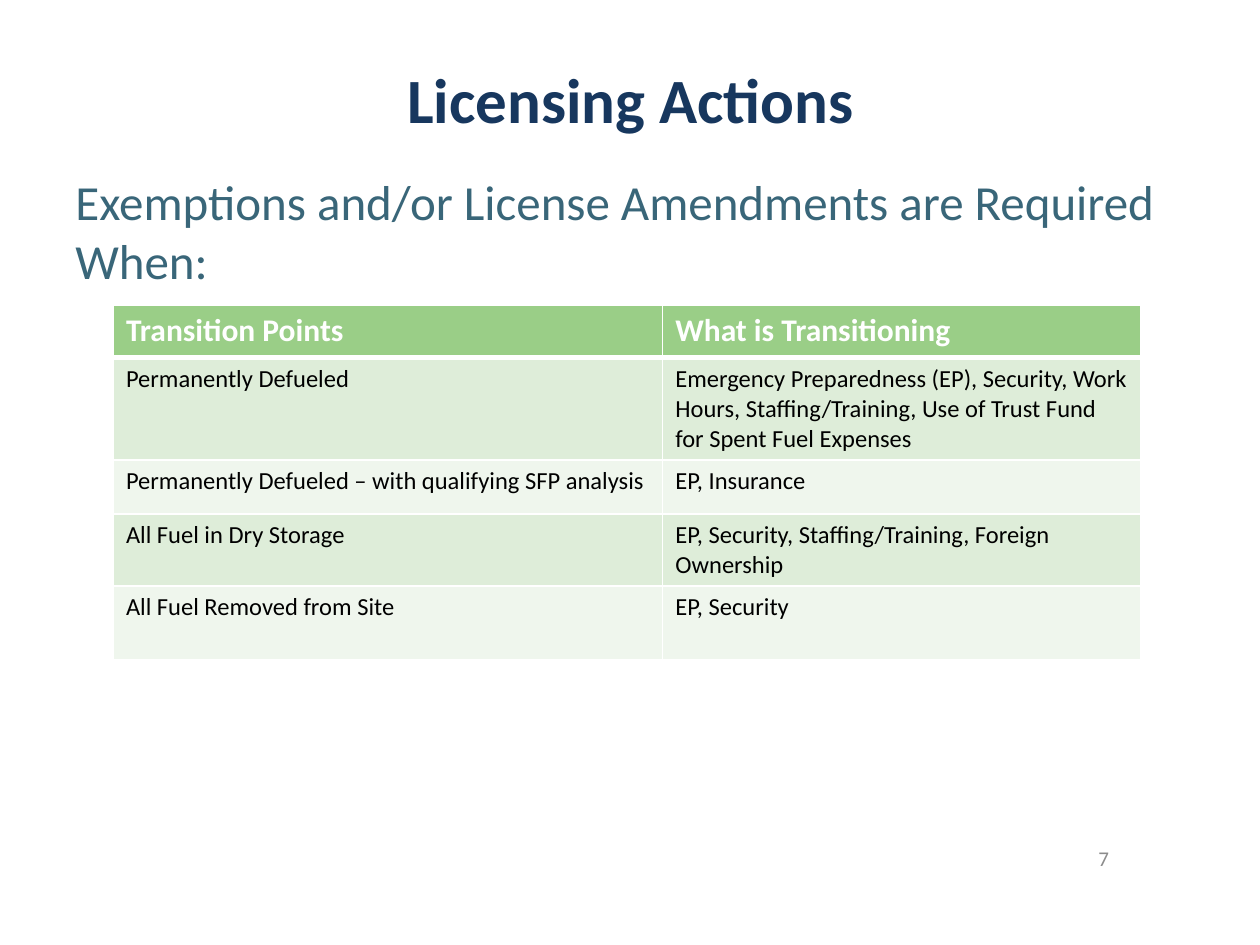
from lxml import etree
from pptx import Presentation
from pptx.dml.color import RGBColor
from pptx.enum.text import MSO_ANCHOR as Anchor, PP_ALIGN as Align
from pptx.oxml.ns import qn
from pptx.util import Inches, Pt

NAVY = RGBColor(0x17, 0x37, 0x5E)
TEAL = RGBColor(0x39, 0x66, 0x79)
GRAY = RGBColor(0x8C, 0x8C, 0x8C)
WHITE = RGBColor(0xFF, 0xFF, 0xFF)
BLACK = RGBColor(0x00, 0x00, 0x00)
HEADER_GREEN = RGBColor(0x9A, 0xCE, 0x87)
BAND_GREENS = [RGBColor(0xDE, 0xED, 0xD9), RGBColor(0xEF, 0xF6, 0xED)]


def write_text(frame, text, size, color, bold=False, align=Align.LEFT, anchor=Anchor.TOP):
    frame.word_wrap = True
    frame.vertical_anchor = anchor
    paragraph = frame.paragraphs[0]
    paragraph.text = text
    paragraph.alignment = align
    for name, value in {"name": "Calibri", "size": Pt(size), "bold": bold}.items():
        setattr(paragraph.font, name, value)
    paragraph.font.color.rgb = color


def add_border(cell, side, points):
    """Draw a white line on one side (L, R, T or B) of a cell."""
    properties = cell._tc.get_or_add_tcPr()
    line = etree.SubElement(properties, qn(f"a:ln{side}"), w=str(Pt(points)))
    fill = etree.SubElement(line, qn("a:solidFill"))
    etree.SubElement(fill, qn("a:srgbClr"), val=str(WHITE))


presentation = Presentation()
presentation.slide_width = Inches(10)
presentation.slide_height = Inches(7.5)
slide = presentation.slides.add_slide(presentation.slide_layouts[5])

title = slide.shapes.title
title.left, title.top = Inches(0.08), Inches(0.25)
title.width, title.height = Inches(9.85), Inches(1.06)
write_text(title.text_frame, "Licensing Actions", 36, NAVY, True, Align.CENTER, Anchor.MIDDLE)

introduction = slide.shapes.add_textbox(Inches(0.5), Inches(1.31), Inches(9.18), Inches(1.1))
write_text(introduction.text_frame,
           "Exemptions and/or License Amendments are Required When:", 28, TEAL)

rows = [
    (0.42, "Transition Points", "What is Transitioning"),
    (0.81, "Permanently Defueled",
     "Emergency Preparedness (EP), Security, Work Hours, Staffing/Training, "
     "Use of Trust Fund for Spent Fuel Expenses"),
    (0.43, "Permanently Defueled – with qualifying SFP analysis", "EP, Insurance"),
    (0.57, "All Fuel in Dry Storage", "EP, Security, Staffing/Training, Foreign Ownership"),
    (0.59, "All Fuel Removed from Site", "EP, Security"),
]
table = slide.shapes.add_table(len(rows), 2, Inches(0.9), Inches(2.42),
                               Inches(8.15), Inches(2.82)).table
for column, width in zip(table.columns, (4.36, 3.79)):
    column.width = Inches(width)

for row_index, (height, *texts) in enumerate(rows):
    table.rows[row_index].height = Inches(height)
    is_header = row_index == 0
    for column_index, text in enumerate(texts):
        cell = table.cell(row_index, column_index)
        write_text(cell.text_frame, text, 18 if is_header else 14,
                   WHITE if is_header else BLACK, is_header)
        for side in "LRTB":
            below_header = (row_index, side) in ((0, "B"), (1, "T"))
            add_border(cell, side, 3 if below_header else 1)
        cell.fill.solid()
        cell.fill.fore_color.rgb = HEADER_GREEN if is_header else BAND_GREENS[(row_index - 1) % 2]

page_number = slide.shapes.add_textbox(Inches(6.57), Inches(6.61), Inches(2.33), Inches(0.4))
write_text(page_number.text_frame, "7", 12, GRAY, align=Align.RIGHT, anchor=Anchor.MIDDLE)

presentation.save("out.pptx")
